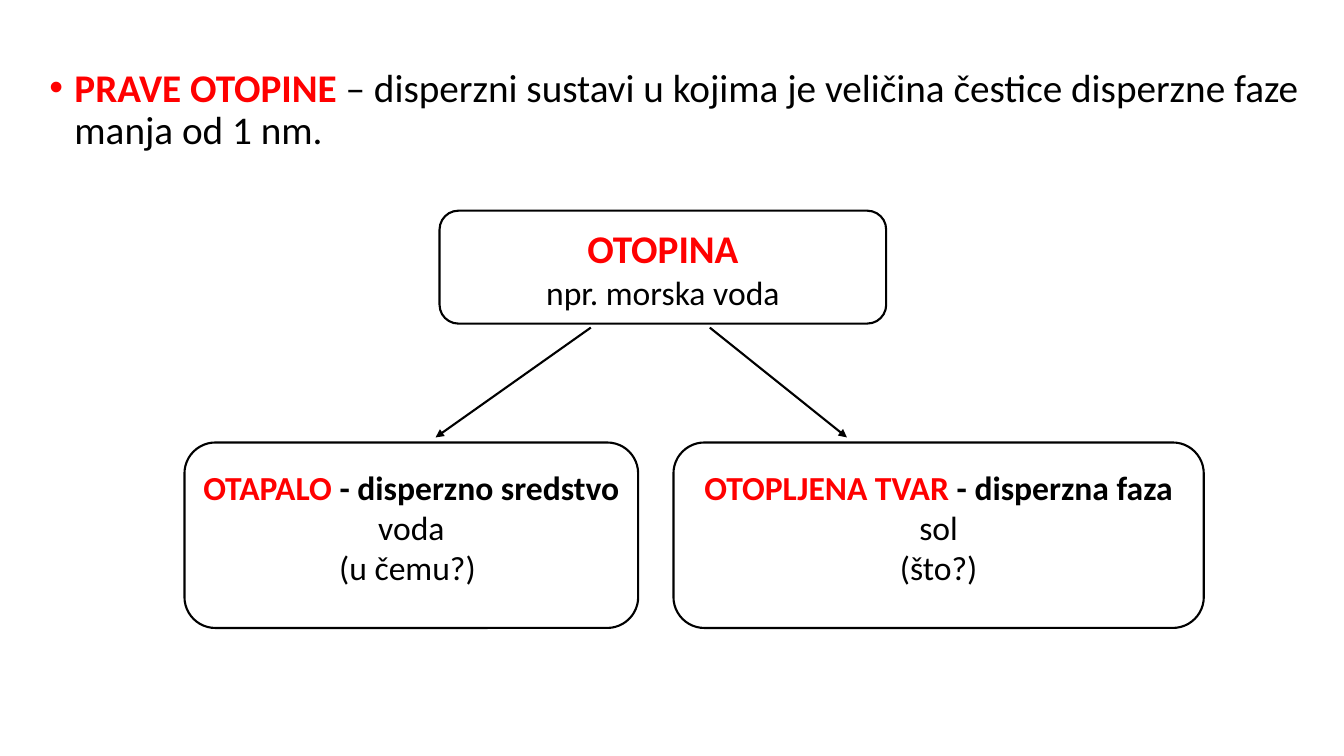
from lxml.etree import SubElement
from pptx import Presentation
from pptx.dml.color import RGBColor
from pptx.enum.shapes import MSO_CONNECTOR, MSO_SHAPE
from pptx.enum.text import PP_ALIGN
from pptx.oxml.ns import qn
from pptx.util import Inches, Pt

RED, BLACK = "FF0000", "000000"
FONT = "Calibri"
LINE_WIDTH = Pt(1.5)
BRANCH_TOP, BRANCH_HEIGHT = 4.39, 1.84
ARROW_TOP, ARROW_BOTTOM = 3.25, 4.34


def color(hex_value):
    return RGBColor.from_string(hex_value)


def add_text_box(slide, box):
    text_frame = slide.shapes.add_textbox(*map(Inches, box)).text_frame
    text_frame.word_wrap = True
    return text_frame


def write_paragraph(paragraph, size, runs):
    """Fill a paragraph with (text, colour, bold) runs of one size."""
    paragraph.font.name = FONT
    paragraph.font.size = Pt(size)
    for text, hex_value, bold in runs:
        run = paragraph.add_run()
        run.text = text
        run.font.color.rgb = color(hex_value)
        run.font.bold = bold


def add_definition(slide, box):
    paragraph = add_text_box(slide, box).paragraphs[0]
    write_paragraph(paragraph, 28, [
        ("PRAVE OTOPINE ", RED, True),
        ("– disperzni sustavi u kojima je veličina čestice disperzne faze manja od 1 nm.",
         BLACK, False),
    ])
    paragraph.line_spacing = 0.9
    paragraph.space_before = Pt(10)
    properties = paragraph._p.get_or_add_pPr()
    properties.set("marL", str(Inches(0.25)))
    properties.set("indent", str(-Inches(0.25)))
    SubElement(properties, qn("a:buFont")).set("typeface", "Arial")
    SubElement(properties, qn("a:buChar")).set("char", "•")


def add_node(slide, box, caption_offset, lines):
    """Draw a rounded outline with centred (size, runs) lines inside it."""
    outline = slide.shapes.add_shape(MSO_SHAPE.ROUNDED_RECTANGLE, *map(Inches, box))
    outline.shadow.inherit = False
    outline.fill.background()
    outline.line.color.rgb = color(BLACK)
    outline.line.width = LINE_WIDTH

    left, top, width, height = box
    caption = (left, top + caption_offset, width, height - 2 * caption_offset)
    text_frame = add_text_box(slide, caption)
    for index, (size, runs) in enumerate(lines):
        paragraph = text_frame.add_paragraph() if index else text_frame.paragraphs[0]
        paragraph.alignment = PP_ALIGN.CENTER
        write_paragraph(paragraph, size, runs)


def add_branch(slide, left, width, term, role, example, question):
    add_node(slide, (left, BRANCH_TOP, width, BRANCH_HEIGHT), 0.19, [
        (24, [(term, RED, True), (role, BLACK, True)]),
        (24, [(example, BLACK, False)]),
        (24, [(question, BLACK, False)]),
    ])


def add_arrow(slide, start_x, end_x):
    arrow = slide.shapes.add_connector(
        MSO_CONNECTOR.STRAIGHT,
        *map(Inches, (start_x, ARROW_TOP, end_x, ARROW_BOTTOM)))
    arrow.line.color.rgb = color(BLACK)
    arrow.line.width = LINE_WIDTH
    SubElement(arrow.line._get_or_add_ln(), qn("a:tailEnd")).set("type", "triangle")
    SubElement(arrow._element.spPr, qn("a:effectLst"))


def add_solution_diagram(slide):
    add_node(slide, (4.36, 2.09, 4.43, 1.12), 0.09, [
        (28, [("OTOPINA", RED, True)]),
        (24, [("npr. morska voda", BLACK, False)]),
    ])
    add_arrow(slide, 5.86, 4.32)
    add_arrow(slide, 7.04, 8.4)
    add_branch(slide, 1.83, 4.5, "OTAPALO", " - disperzno sredstvo", "voda", "(u čemu?) ")
    add_branch(slide, 6.68, 5.26, "OTOPLJENA TVAR ", "- disperzna faza", "sol", "(što?)")


def main():
    presentation = Presentation()
    presentation.slide_width = Inches(13.33)
    presentation.slide_height = Inches(7.5)
    slide = presentation.slides.add_slide(presentation.slide_layouts[6])
    add_definition(slide, (0.39, 0.63, 12.89, 6.13))
    add_solution_diagram(slide)
    presentation.save("out.pptx")


if __name__ == "__main__":
    main()
